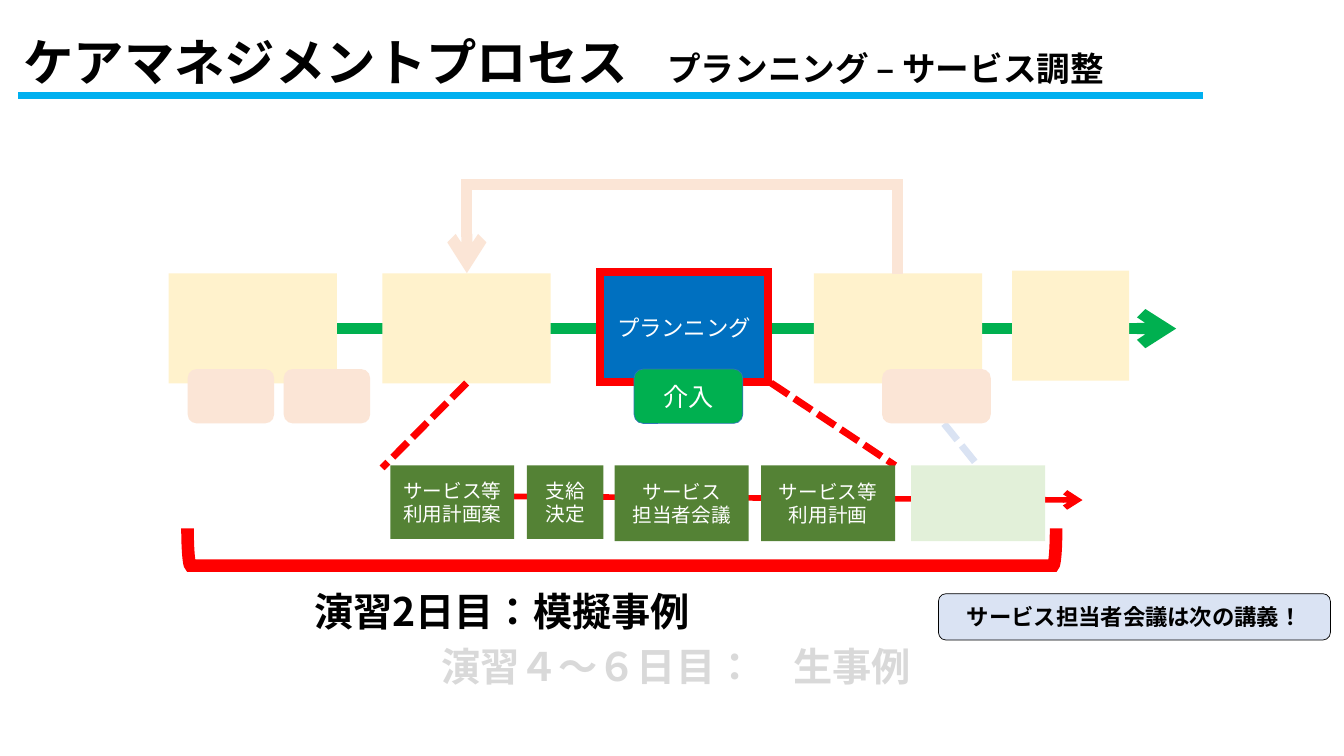
from lxml.etree import SubElement
from pptx import Presentation
from pptx.dml.color import RGBColor
from pptx.enum.dml import MSO_LINE
from pptx.enum.lang import MSO_LANGUAGE_ID
from pptx.enum.shapes import MSO_CONNECTOR, MSO_SHAPE
from pptx.enum.text import MSO_ANCHOR, PP_ALIGN
from pptx.oxml.ns import qn
from pptx.util import Cm, Pt

COLORS = {
    "black": "000000", "white": "FFFFFF", "gray": "D9D9D9",
    "red": "FF0000", "green": "00B050", "sky": "00B0F0",
    "blue": "0070C0", "edge": "2E75B6", "pale_blue": "DAE3F3",
    "cream": "FFF2CC", "peach": "FBE5D6",
    "olive": "548235", "pale_green": "E2F0D9",
}


def rgb(name):
    return RGBColor.from_string(COLORS[name])


class Board:
    font = "Noto Sans CJK JP"

    def __init__(self, prs):
        self.s = prs.slides.add_slide(prs.slide_layouts[6])

    def style(self, r, size, color, bold=False):
        r.font.size = Pt(size)
        r.font.bold = bold
        r.font.color.rgb = rgb(color)
        r.font.name = self.font
        r.font.language_id = MSO_LANGUAGE_ID.JAPANESE
        SubElement(r._r.get_or_add_rPr(), qn("a:ea")).set("typeface", self.font)

    def stroke(self, line, color, width):
        line.color.rgb = rgb(color)
        line.width = Pt(width)

    def miter(self, line):
        SubElement(line._ln, qn("a:miter")).set("lim", "800000")

    def box(self, x, y, w, h, fill, lines=(), size=16, color="white", bold=False,
            edge=None, edge_width=0.5, kind=MSO_SHAPE.RECTANGLE):
        sp = self.s.shapes.add_shape(kind, Cm(x), Cm(y), Cm(w), Cm(h))
        sp.shadow.inherit = False
        if fill:
            sp.fill.solid()
            sp.fill.fore_color.rgb = rgb(fill)
        else:
            sp.fill.background()
        if edge:
            self.stroke(sp.line, edge, edge_width)
            self.miter(sp.line)
        else:
            sp.line.fill.background()
        if lines:
            tf = sp.text_frame
            tf.word_wrap = True
            tf.vertical_anchor = MSO_ANCHOR.MIDDLE
            tf.text = "\n".join(lines)
            for p in tf.paragraphs:
                p.alignment = PP_ALIGN.CENTER
                self.style(p.runs[0], size, color, bold)
        return sp

    def badge(self, x, y, w, h, fill, lines, **look):
        return self.box(x, y, w, h, fill, lines, kind=MSO_SHAPE.ROUNDED_RECTANGLE, **look)

    def text(self, x, y, w, h, parts, color="black", anchor=MSO_ANCHOR.TOP, spacing=1.0):
        tf = self.s.shapes.add_textbox(Cm(x), Cm(y), Cm(w), Cm(h)).text_frame
        tf.word_wrap = True
        tf.vertical_anchor = anchor
        p = tf.paragraphs[0]
        p.line_spacing = spacing
        for words, size in parts:
            r = p.add_run()
            r.text = words
            self.style(r, size, color, True)

    def line(self, x1, y1, x2, y2, color, width, dash=False, arrow=False,
             kind=MSO_CONNECTOR.STRAIGHT):
        c = self.s.shapes.add_connector(kind, Cm(x1), Cm(y1), Cm(x2), Cm(y2))
        self.stroke(c.line, color, width)
        if dash:
            c.line.dash_style = MSO_LINE.SQUARE_DOT
            c.line._ln.find(qn("a:prstDash")).set("val", "sysDash")
        self.miter(c.line)
        if arrow:
            SubElement(c.line._ln, qn("a:tailEnd")).set("type", "arrow")
        SubElement(c._element.spPr, qn("a:effectLst"))
        return c

    def loop(self, x_from, x_to, y, rise, color, width):
        """Elbow arrow that leaves upwards and comes back down at the same height."""
        span, depth = x_from - x_to, 0.01
        mid = (x_from + x_to) / 2
        c = self.line(mid, y - span / 2, mid + depth, y + span / 2, color, width,
                      arrow=True, kind=MSO_CONNECTOR.ELBOW)
        xfrm = c._element.spPr.find(qn("a:xfrm"))
        xfrm.set("rot", str(270 * 60000))
        xfrm.set("flipV", "1")
        geom = c._element.spPr.find(qn("a:prstGeom"))
        av = geom.find(qn("a:avLst"))
        if av is None:
            av = SubElement(geom, qn("a:avLst"))
        gd = SubElement(av, qn("a:gd"))
        gd.set("name", "adj1")
        gd.set("fmla", f"val {round(rise / depth * 100000)}")


def main():
    prs = Presentation()
    prs.slide_width, prs.slide_height = Cm(33.87), Cm(19.05)
    b = Board(prs)

    # Title
    b.text(0.34, 0.36, 33.2, 2.57,
           [("ケアマネジメントプロセス", 36), ("　", 28), ("プランニング – サービス調整", 24)],
           anchor=MSO_ANCHOR.MIDDLE, spacing=0.9)

    # Flow arrows behind the boxes
    b.line(11.4, 12.5, 27.28, 12.6, "red", 4, arrow=True)
    b.line(6.91, 8.28, 29.64, 8.28, "green", 8, arrow=True)

    # Main process
    for x, y, w in [(4.25, 6.89, 4.24), (9.64, 6.89, 4.24),
                    (20.51, 6.89, 4.24), (25.51, 6.82, 2.95)]:
        b.box(x, y, w, 2.77, "cream")
    b.box(15.12, 6.86, 4.24, 2.77, "blue", ["プランニング"], edge="red", edge_width=6)
    b.loop(22.62, 11.76, 6.89, 2.24, "peach", 8)

    # Links from the process to the detailed steps
    for x1, y1, x2, y2, color in [
        (11.76, 9.65, 9.63, 11.79, "red"),
        (19.43, 9.65, 22.56, 11.73, "red"),
        (22.91, 9.58, 24.64, 11.73, "pale_blue"),
    ]:
        b.line(x1, y1, x2, y2, color, 5, dash=True)

    # Detailed steps
    for x, w, h, fill, lines in [
        (9.84, 3.12, 1.85, "olive", ["サービス等", "利用計画案"]),
        (13.28, 1.93, 1.85, "olive", ["支給", "決定"]),
        (15.49, 3.38, 1.91, "olive", ["サービス", "担当者会議"]),
        (19.18, 3.38, 1.91, "olive", ["サービス等", "利用計画"]),
        (22.96, 3.38, 1.91, "pale_green", []),
    ]:
        b.box(x, 11.73, w, h, fill, lines, 14)

    # Badges under the process
    for x, w, fill, edge, lines in [
        (4.73, 2.18, "peach", None, []),
        (7.15, 2.18, "peach", None, []),
        (15.98, 2.74, "green", "edge", ["介入"]),
        (22.23, 2.74, "peach", None, []),
    ]:
        b.badge(x, 9.3, w, 1.37, fill, lines, size=18, edge=edge)

    # Bracket and exercise days
    bracket = b.box(15.2, 2.84, 0.94, 21.89, None, edge="red", edge_width=9,
                    kind=MSO_SHAPE.RIGHT_BRACKET)
    bracket.rotation = 90
    b.text(7.67, 14.68, 15.49, 1.45, [("演習2日目：模擬事例", 28)])
    b.text(10.87, 16.05, 14.76, 1.45, [("演習４～６日目：　生事例", 28)], "gray")

    # Title rule and note
    b.line(0.46, 2.41, 30.31, 2.41, "sky", 4.5)
    b.badge(23.65, 14.96, 9.88, 1.17, "pale_blue", ["サービス担当者会議は次の講義！"],
            color="black", bold=True, edge="black")

    prs.save("out.pptx")


if __name__ == "__main__":
    main()
